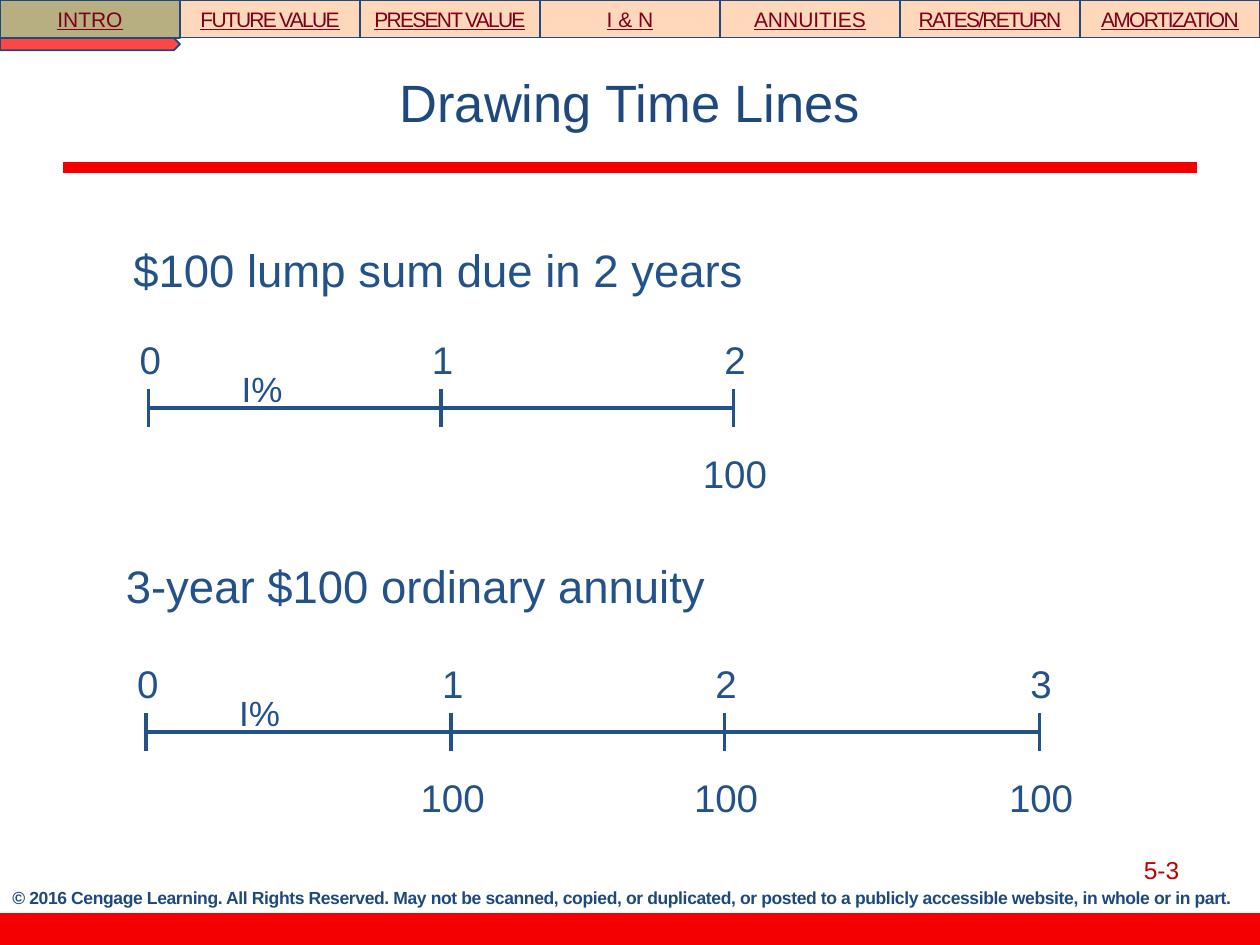
from dataclasses import dataclass

from lxml import etree
from pptx import Presentation
from pptx import util as u
from pptx.dml.color import RGBColor
from pptx.enum import shapes, text
from pptx.oxml.ns import qn


@dataclass(frozen=True)
class Theme:
    font: str = "Arial"
    navy: str = "1F497D"
    blue: str = "23518A"
    red: str = "F50000"
    page_red: str = "C00000"
    maroon: str = "7C0019"
    tab: str = "FFD7BB"
    active_tab: str = "B7AF81"
    marker: str = "FF4747"
    title_size: int = 30
    heading_size: int = 26
    label_size: int = 22
    rate_size: int = 20
    page_size: int = 14
    tab_size: int = 12
    footer_size: int = 10


THEME = Theme()
WIDTH, HEIGHT = 10, 7.5
TAB_HEIGHT = 0.3
LABEL_SHIFT = 0.02

TITLE = "Drawing Time Lines"
PAGE = "5-3"
COPYRIGHT = (
    "© 2016 Cengage Learning. All Rights Reserved. May not be scanned, copied, or duplicated, "
    "or posted to a publicly accessible website, in whole or in part."
)
TABS = [
    ("INTRO", 0),
    ("FUTURE VALUE", -1),
    ("PRESENT VALUE", -1),
    ("I & N", 0),
    ("ANNUITIES", 0),
    ("RATES/RETURN", -1),
    ("AMORTIZATION", -1),
]
TIME_LINES = [
    {
        "heading": "$100 lump sum due in 2 years",
        "heading_box": (0.96, 1.87, 6.83, 0.54),
        "axis": 3.24,
        "ticks": [1.18, 3.5, 5.82],
        "payments": ["", "", "100"],
    },
    {
        "heading": "3-year $100 ordinary annuity",
        "heading_box": (0.9, 4.38, 5.5, 0.54),
        "axis": 5.81,
        "ticks": [1.16, 3.58, 5.75, 8.25],
        "payments": ["", "100", "100", "100"],
    },
]


def inches(box):
    return [u.Inches(value) for value in box]


def color(value):
    return RGBColor.from_string(value)


def write(shape, content, size, ink, align=text.PP_ALIGN.LEFT, anchor=text.MSO_ANCHOR.TOP,
          wrap=True, bold=False, underline=False, line_spacing=None, tracking=0):
    frame = shape.text_frame
    frame.text = content
    frame.word_wrap = wrap
    frame.vertical_anchor = anchor
    paragraph = frame.paragraphs[0]
    paragraph.alignment = align
    paragraph.line_spacing = line_spacing
    run = paragraph.runs[0]
    font = run.font
    font.name = THEME.font
    font.size = u.Pt(size)
    font.bold = bold
    font.underline = underline
    font.color.rgb = color(ink)
    if tracking:
        run._r.get_or_add_rPr().set("spc", str(round(tracking * 100)))


def add_text(parent, box, content, size, ink, **options):
    write(parent.shapes.add_textbox(*inches(box)), content, size, ink, **options)


def add_block(parent, kind, box, fill, outline, weight):
    shape = parent.shapes.add_shape(kind, *inches(box))
    shape.shadow.inherit = False
    shape.fill.solid()
    shape.fill.fore_color.rgb = color(fill)
    shape.line.color.rgb = color(outline)
    shape.line.width = u.Pt(weight)
    return shape


def add_line(parent, points, ink, weight):
    line = parent.shapes.add_connector(shapes.MSO_CONNECTOR.STRAIGHT, *inches(points))
    line.line.color.rgb = color(ink)
    line.line.width = u.Pt(weight)
    etree.SubElement(line._element.spPr, qn("a:effectLst"))


def add_frame(slide):
    add_line(slide, (0.5, 1.33, 9.5, 1.33), THEME.red, 6)
    add_block(slide, shapes.MSO_SHAPE.RECTANGLE, (0, HEIGHT - 0.25, WIDTH, 0.25),
              THEME.red, THEME.red, 0.75)
    add_text(slide, (0, 7.01, WIDTH, 0.25), COPYRIGHT, THEME.footer_size, THEME.navy,
             align=text.PP_ALIGN.JUSTIFY, bold=True, line_spacing=0.9, tracking=-0.2)
    add_text(slide, (0.5, 0.31, 9, 1.08), TITLE, THEME.title_size, THEME.navy,
             align=text.PP_ALIGN.CENTER, anchor=text.MSO_ANCHOR.MIDDLE, line_spacing=0.8)
    add_text(slide, (8.98, 6.74, 1.02, 0.34), PAGE, THEME.page_size, THEME.page_red)


def add_time_line(slide, time_line):
    group = slide.shapes.add_group_shape()
    axis, ticks = time_line["axis"], time_line["ticks"]
    add_text(group, time_line["heading_box"], time_line["heading"],
             THEME.heading_size, THEME.blue)
    add_line(group, (ticks[0], axis, ticks[-1], axis), THEME.blue, 2)
    add_text(group, (ticks[0] + 0.64, axis - 0.37, 0.53, 0.44), "I%",
             THEME.rate_size, THEME.blue, wrap=False)
    for year, (tick, payment) in enumerate(zip(ticks, time_line["payments"])):
        add_line(group, (tick, axis - 0.15, tick, axis + 0.15), THEME.blue, 2)
        for content, top, width in ((str(year), axis - 0.62, 0.38),
                                    (payment, axis + 0.28, 0.72)):
            if content:
                left = tick + LABEL_SHIFT - width / 2
                add_text(group, (left, top, width, 0.47), content,
                         THEME.label_size, THEME.blue, wrap=False)


def add_navigation(slide):
    width = WIDTH / len(TABS)
    add_block(slide, shapes.MSO_SHAPE.PENTAGON, (0, TAB_HEIGHT, width, 0.1),
              THEME.marker, THEME.navy, 1)
    group = slide.shapes.add_group_shape()
    for index, (label, tracking) in enumerate(TABS):
        fill, weight = (THEME.tab, 0.75) if index else (THEME.active_tab, 1)
        tab = add_block(group, shapes.MSO_SHAPE.RECTANGLE,
                        (index * width, 0, width, TAB_HEIGHT), fill, THEME.navy, weight)
        write(tab, label, THEME.tab_size, THEME.maroon, align=text.PP_ALIGN.CENTER,
              anchor=text.MSO_ANCHOR.MIDDLE, underline=True, tracking=tracking)


def main():
    presentation = Presentation()
    presentation.slide_width, presentation.slide_height = inches((WIDTH, HEIGHT))
    slide = presentation.slides.add_slide(presentation.slide_layouts[6])
    add_frame(slide)
    for time_line in TIME_LINES:
        add_time_line(slide, time_line)
    add_navigation(slide)
    presentation.save("out.pptx")


if __name__ == "__main__":
    main()
